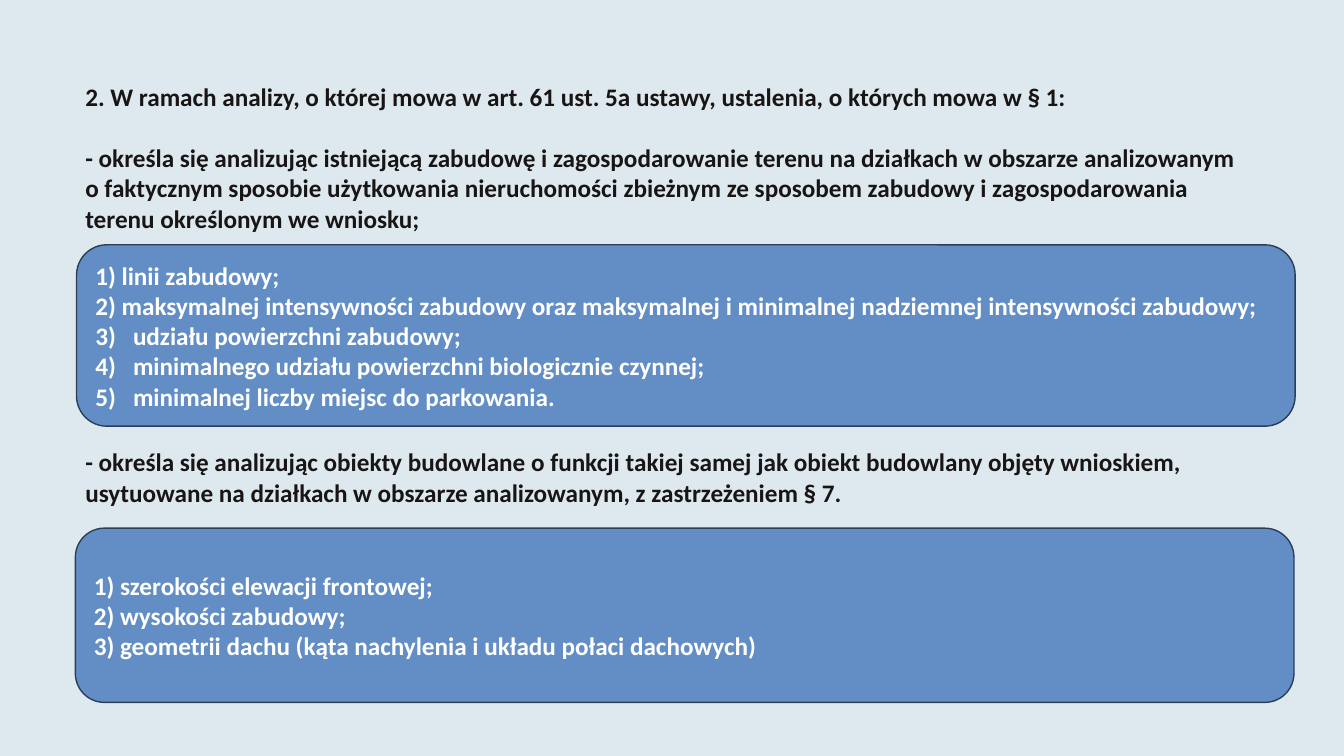
from dataclasses import dataclass

from lxml import etree
from pptx import Presentation
from pptx.dml.color import RGBColor
from pptx.enum import shapes, text
from pptx.oxml import ns
from pptx.util import Cm, Pt

# Content: (left, top, width, height in cm), then paragraphs
STATEMENTS = [
    ((1.9, 1.93, 29.79, 4.11), [
        "2. W ramach analizy, o której mowa w art. 61 ust. 5a ustawy, ustalenia, o których mowa w § 1:",
        "- określa się analizując istniejącą zabudowę i zagospodarowanie terenu na działkach w obszarze "
        "analizowanym o faktycznym sposobie użytkowania nieruchomości zbieżnym ze sposobem zabudowy "
        "i zagospodarowania terenu określonym we wniosku;",
    ]),
    ((1.9, 11.13, 29.79, 1.8), [
        "- określa się analizując obiekty budowlane o funkcji takiej samej jak obiekt budowlany objęty "
        "wnioskiem, usytuowane na działkach w obszarze analizowanym, z zastrzeżeniem § 7.",
    ]),
]
# Panels also carry the lines that are numbered automatically
PANELS = [
    ((1.93, 6.17, 30.71, 4.57), [
        "1) linii zabudowy;",
        "2) maksymalnej intensywności zabudowy oraz maksymalnej i minimalnej nadziemnej intensywności zabudowy;",
    ], [
        "udziału powierzchni zabudowy;",
        "minimalnego udziału powierzchni biologicznie czynnej;",
        "minimalnej liczby miejsc do parkowania.",
    ]),
    ((1.9, 13.31, 30.71, 4.39), [
        "1) szerokości elewacji frontowej;",
        "2) wysokości zabudowy;",
        "3) geometrii dachu (kąta nachylenia i układu połaci dachowych)",
    ], []),
]


@dataclass(frozen=True)
class Theme:
    background: RGBColor = RGBColor.from_string("DEE8EF")
    ink: RGBColor = RGBColor.from_string("191515")
    panel: RGBColor = RGBColor.from_string("628EC5")
    outline: RGBColor = RGBColor.from_string("2B3E56")
    panel_ink: RGBColor = RGBColor.from_string("FFFFFF")
    font: str = "Calibri"
    size: Pt = Pt(18)
    line_gap: Pt = Pt(22)
    indent: Cm = Cm(0.95)


THEME = Theme()


def write(box, lines, color):
    frame = box.text_frame
    frame.word_wrap = True
    frame.text = "\n".join(lines)
    for para in frame.paragraphs:
        para.alignment = text.PP_ALIGN.LEFT
        for span in para.runs:
            span.font.name = THEME.font
            span.font.size = THEME.size
            span.font.bold = True
            span.font.color.rgb = color
    return frame


def number(para, start):
    properties = para._p.get_or_add_pPr()
    properties.set("marL", str(THEME.indent))
    properties.set("indent", str(-THEME.indent))
    bullet = etree.SubElement(properties, ns.qn("a:buAutoNum"))
    bullet.set("type", "arabicParenR")
    bullet.set("startAt", str(start))


def add_statement(page, place, lines):
    box = page.shapes.add_textbox(*map(Cm, place))
    frame = write(box, lines, THEME.ink)
    for para in frame.paragraphs[1:]:
        para.space_before = THEME.line_gap


def add_panel(page, place, lines, numbered):
    box = page.shapes.add_shape(shapes.MSO_SHAPE.ROUNDED_RECTANGLE, *map(Cm, place))
    box.shadow.inherit = False
    box.fill.solid()
    box.fill.fore_color.rgb = THEME.panel
    box.line.color.rgb = THEME.outline
    box.line.width = Pt(1)
    frame = write(box, lines + numbered, THEME.panel_ink)
    frame.vertical_anchor = text.MSO_ANCHOR.MIDDLE
    for para in frame.paragraphs[len(lines):]:
        number(para, len(lines) + 1)


def main():
    deck = Presentation()
    deck.slide_width, deck.slide_height = Cm(33.87), Cm(19.05)
    page = deck.slides.add_slide(deck.slide_layouts[6])
    page.background.fill.solid()
    page.background.fill.fore_color.rgb = THEME.background

    # Statements and the panels that list their items
    for statement, panel in zip(STATEMENTS, PANELS):
        add_statement(page, *statement)
        add_panel(page, *panel)

    deck.save("out.pptx")


if __name__ == "__main__":
    main()
